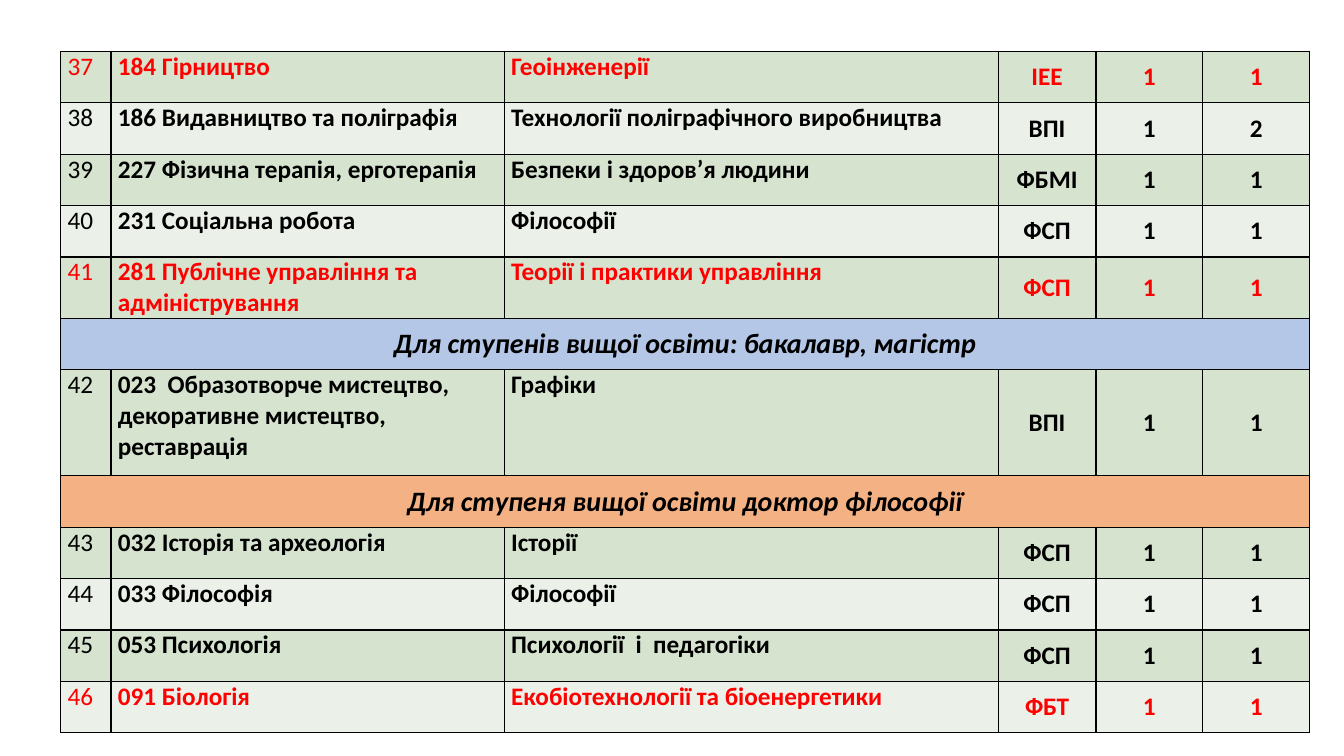
"""Build a slide with a table of specialities, departments and places."""
import pptx
import pptx.dml.color
import pptx.enum.text
import pptx.oxml
import pptx.oxml.ns
import pptx.util
from pptx.util import Inches

BLACK, RED = "000000", "FF0000"
BAND_FILLS = ("D5E3CF", "EBF1E9")
COLUMN_WIDTHS = (0.5, 3.9, 4.9, 0.97, 1.06, 1.06)
ROW_HEIGHT, TALL_ROW_HEIGHT = 0.51, 1.05
TALL_NUMBER = "42"
RED_NUMBERS = ("37", "41", "46")
SECTION_FILLS = {
    "Для ступенів вищої освіти: бакалавр, магістр": "B4C7E7",
    "Для ступеня вищої освіти доктор філософії": "F4B183",
}
ROWS = (
    ("37", "184 Гірництво", "Геоінженерії", "ІЕЕ", "1", "1"),
    ("38", "186 Видавництво та поліграфія", "Технології поліграфічного виробництва", "ВПІ", "1", "2"),
    ("39", "227 Фізична терапія, ерготерапія", "Безпеки і здоров’я людини", "ФБМІ", "1", "1"),
    ("40", "231 Соціальна робота", "Філософії", "ФСП", "1", "1"),
    ("41", "281 Публічне управління та адміністрування", "Теорії і практики управління", "ФСП", "1", "1"),
    ("Для ступенів вищої освіти: бакалавр, магістр",),
    ("42", "023  Образотворче мистецтво, декоративне мистецтво, реставрація", "Графіки", "ВПІ", "1", "1"),
    ("Для ступеня вищої освіти доктор філософії",),
    ("43", "032 Історія та археологія", "Історії", "ФСП", "1", "1"),
    ("44", "033 Філософія", "Філософії", "ФСП", "1", "1"),
    ("45", "053 Психологія", "Психології  і  педагогіки", "ФСП", "1", "1"),
    ("46", "091 Біологія", "Екобіотехнології та біоенергетики", "ФБТ", "1", "1"),
)


def color(hex_string):
    return pptx.dml.color.RGBColor.from_string(hex_string)


def add_borders(cell):
    properties = cell._tc.get_or_add_tcPr()
    for side in ("lnL", "lnR", "lnT", "lnB"):
        properties.append(pptx.oxml.parse_xml(
            f'<a:{side} {pptx.oxml.ns.nsdecls("a")} w="{pptx.util.Pt(1)}">'
            f'<a:solidFill><a:srgbClr val="{BLACK}"/></a:solidFill></a:{side}>'))


def format_cell(cell, fill):
    cell.margin_left = cell.margin_right = Inches(0.07)
    cell.margin_top = cell.margin_bottom = 0
    add_borders(cell)
    cell.fill.solid()
    cell.fill.fore_color.rgb = color(fill)


def write_cell(cell, text, text_color=BLACK, size=18, bold=True, italic=False, centered=False):
    cell.text = text
    paragraph = cell.text_frame.paragraphs[0]
    font = paragraph.font
    font.name, font.size = "Calibri", pptx.util.Pt(size)
    font.bold, font.italic = bold, italic
    font.color.rgb = color(text_color)
    if centered:
        paragraph.alignment = pptx.enum.text.PP_ALIGN.CENTER
        cell.vertical_anchor = pptx.enum.text.MSO_ANCHOR.MIDDLE


def fill_section_row(cells, title):
    for cell in cells:
        format_cell(cell, SECTION_FILLS[title])
    cells[0].merge(cells[-1])
    write_cell(cells[0], title, size=20, italic=True, centered=True)


def fill_speciality_row(cells, values, fill):
    text_color = RED if values[0] in RED_NUMBERS else BLACK
    for column, (cell, value) in enumerate(zip(cells, values)):
        format_cell(cell, fill)
        write_cell(cell, value, text_color, bold=column > 0, centered=column > 2)


def add_speciality_table(slide):
    heights = [TALL_ROW_HEIGHT if values[0] == TALL_NUMBER else ROW_HEIGHT for values in ROWS]
    table = slide.shapes.add_table(
        len(ROWS), len(COLUMN_WIDTHS), Inches(0.6), Inches(0.51),
        Inches(sum(COLUMN_WIDTHS)), Inches(sum(heights))).table
    for column, width in zip(table.columns, COLUMN_WIDTHS):
        column.width = Inches(width)
    for index, (row, height, values) in enumerate(zip(table.rows, heights, ROWS)):
        row.height = Inches(height)
        cells = list(row.cells)
        if len(values) == 1:
            fill_section_row(cells, values[0])
        else:
            fill_speciality_row(cells, values, BAND_FILLS[index % 2])


def main():
    presentation = pptx.Presentation()
    presentation.slide_width = Inches(13.33)
    presentation.slide_height = Inches(7.5)
    slide = presentation.slides.add_slide(presentation.slide_layouts[6])
    add_speciality_table(slide)
    presentation.save("out.pptx")


if __name__ == "__main__":
    main()
